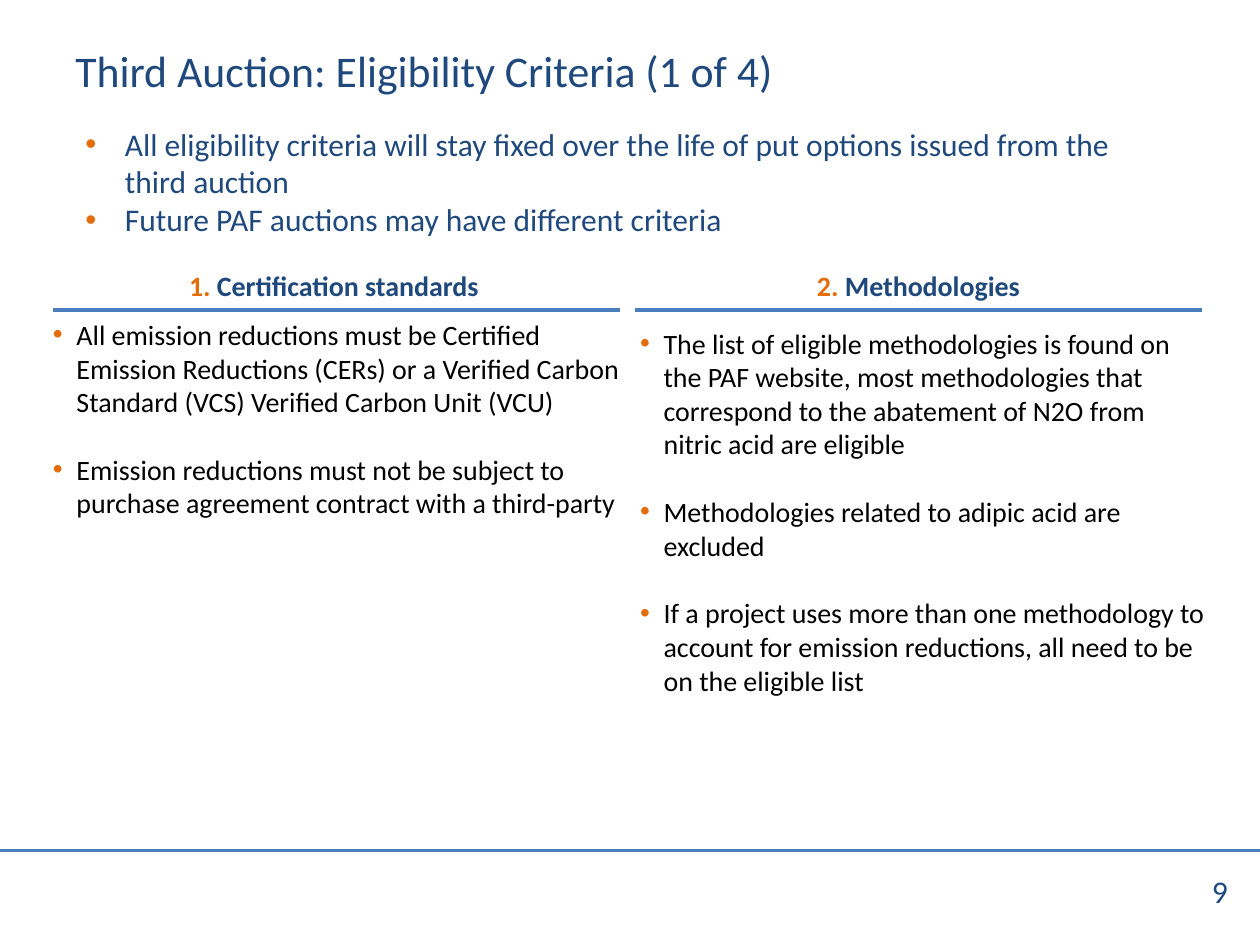
"""Build the slide on eligibility criteria for the third auction."""
from lxml import etree
from pptx import Presentation
from pptx import util as u
from pptx.dml.color import RGBColor
from pptx.enum import shapes, text
from pptx.oxml import ns

COLORS = {"navy": "1F497D", "orange": "E46C0A", "rule": "4B7EBC", "black": "000000"}
COLUMNS = [
    {
        "left": 30.24, "head_left": 28.8, "rule_left": 30.24, "top": 181.44,
        "number": "1. ", "heading": "Certification standards",
        "points": [
            "All emission reductions must be Certified Emission Reductions (CERs) or a "
            "Verified Carbon Standard (VCS) Verified Carbon Unit (VCU)",
            "Emission reductions must not be subject to purchase agreement contract "
            "with a third-party",
        ],
    },
    {
        "left": 365.76, "head_left": 362.88, "rule_left": 362.88, "top": 186.4,
        "number": "2. ", "heading": "Methodologies",
        "points": [
            "The list of eligible methodologies is found on the PAF website, most "
            "methodologies that correspond to the abatement of N2O from nitric acid "
            "are eligible",
            "Methodologies related to adipic acid are excluded",
            "If a project uses more than one methodology to account for emission "
            "reductions, all need to be on the eligible list",
        ],
    },
]
COLUMN_WIDTH = 324


def add_box(page, left, top, width, height, inset=True):
    """Add a wrapping text box and return its text frame."""
    box = page.shapes.add_textbox(u.Pt(left), u.Pt(top), u.Pt(width), u.Pt(height))
    frame = box.text_frame
    frame.word_wrap = True
    if not inset:
        for side in ("left", "top", "right", "bottom"):
            setattr(frame, f"margin_{side}", 0)
    return frame


def add_span(para, words, size, color, bold=False):
    """Append a formatted run to a paragraph."""
    span = para.add_run()
    span.text = words
    formats = {"name": "Calibri", "size": u.Pt(size), "bold": bold}
    for name, value in formats.items():
        setattr(span.font, name, value)
    span.font.color.rgb = RGBColor.from_string(COLORS[color])


def add_bullet(para, indent):
    """Give a paragraph an orange bullet with a hanging indent."""
    props = para._p.get_or_add_pPr()
    props.set("marL", str(u.Pt(indent)))
    props.set("indent", str(-u.Pt(indent)))
    tint = etree.SubElement(props, ns.qn("a:buClr"))
    etree.SubElement(tint, ns.qn("a:srgbClr"), val=COLORS["orange"])
    etree.SubElement(props, ns.qn("a:buFont"), typeface="Arial")
    etree.SubElement(props, ns.qn("a:buChar"), char="•")


def add_points(frame, points, size, color, indent, gap=0):
    """Fill a text frame with bulleted paragraphs."""
    for index, words in enumerate(points):
        para = frame.add_paragraph() if index else frame.paragraphs[0]
        add_bullet(para, indent)
        if index and gap:
            para.space_before = u.Pt(gap)
        add_span(para, words, size, color)


def add_rule(page, left, top, width, weight):
    """Draw a horizontal rule."""
    rule = page.shapes.add_connector(
        shapes.MSO_CONNECTOR.STRAIGHT,
        u.Pt(left), u.Pt(top), u.Pt(left + width), u.Pt(top))
    rule.line.color.rgb = RGBColor.from_string(COLORS["rule"])
    rule.line.width = u.Pt(weight)
    etree.SubElement(rule._element.spPr, ns.qn("a:effectLst"))


def add_column(page, column):
    """Add a numbered heading, its rule and the points beneath."""
    body = add_box(page, column["left"], column["top"], COLUMN_WIDTH, 144, inset=False)
    add_points(body, column["points"], 16, "black", 13.5, gap=19.5)
    add_rule(page, column["rule_left"], 177.12, COLUMN_WIDTH, 2)
    para = add_box(page, column["head_left"], 149.76, COLUMN_WIDTH, 26.64).paragraphs[0]
    para.alignment = text.PP_ALIGN.CENTER
    add_span(para, column["number"], 16, "orange", bold=True)
    add_span(para, column["heading"], 16, "navy", bold=True)


def main():
    """Build and save the deck."""
    deck = Presentation()
    deck.slide_width, deck.slide_height = u.Pt(720), u.Pt(540)
    page = deck.slides.add_slide(deck.slide_layouts[6])
    add_rule(page, 0, 486, 720, 1.5)
    title = add_box(page, 36, 21.6, 666, 37.44)
    add_span(title.paragraphs[0], "Third Auction: Eligibility Criteria (1 of 4)", 25, "navy")
    add_points(add_box(page, 41.76, 67.68, 630, 72.72), [
        "All eligibility criteria will stay fixed over the life of put options issued "
        "from the third auction",
        "Future PAF auctions may have different criteria",
    ], 18, "navy", 22.5)
    for column in COLUMNS:
        add_column(page, column)
    number = add_box(page, 685.44, 494.64, 34.56, 28.8)
    add_span(number.paragraphs[0], "9", 18, "navy")
    deck.save("out.pptx")


if __name__ == "__main__":
    main()
